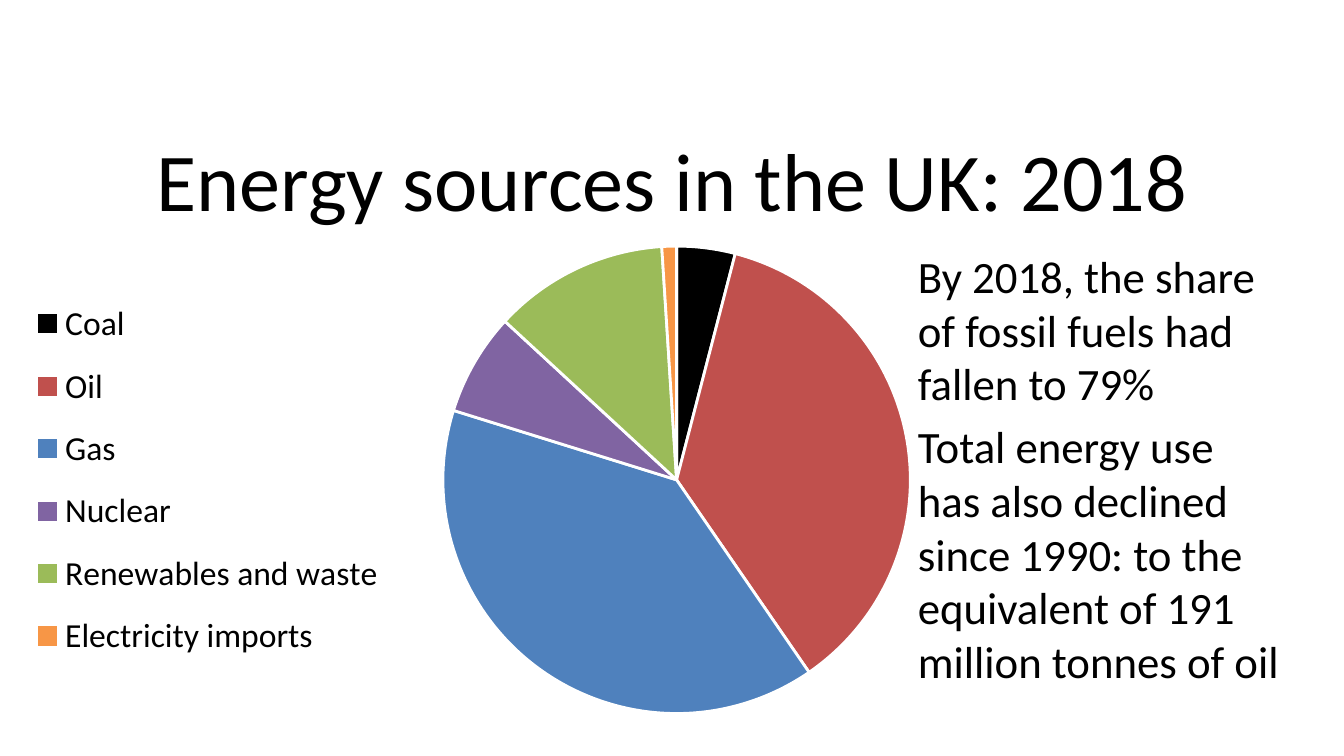
"""Build a slide with a pie chart of UK energy sources in 2018."""
from lxml import etree
from pptx import Presentation
from pptx import util as u
from pptx.chart import data as cd
from pptx.dml.color import RGBColor as Rgb
from pptx.enum import chart as ch, text as tx
from pptx.oxml import parse_xml
from pptx.oxml.ns import nsdecls

TITLE = "Energy sources in the UK: 2018"
NOTES = [
    "By 2018, the share of fossil fuels had fallen to 79%",
    "Total energy use has also declined since 1990: "
    "to the equivalent of 191 million tonnes of oil",
]
FUELS = [
    ("Coal", 4, "000000"),
    ("Oil", 36, "C0504D"),
    ("Gas", 39, "4F81BD"),
    ("Nuclear", 7, "8064A2"),
    ("Renewables and waste", 12, "9BBB59"),
    ("Electricity imports", 1, "F79646"),
]
THEME = {"font": "Calibri", "ink": "000000", "edge": "FFFFFF",
         "title": 44, "body": 24, "key": 18, "chart": 10}
SIZE = (720, 405)
BOX = {"title": (14.4, 62, 692, 67.7), "pie": (1.4, 121, 523.4, 272.2),
       "notes": (484.6, 129.6, 209.5, 243.4)}
PLOT = (0.45, 0.04, 0.48, 0.92)
KEY = (0.01, 0.11, 0.4, 0.78)


def style(font, kind):
    font.name = THEME["font"]
    font.size = u.Pt(THEME[kind])
    font.color.rgb = Rgb.from_string(THEME["ink"])


def place(shape, box):
    shape.left, shape.top, shape.width, shape.height = map(u.Pt, box)


def layout(parent, after, box, inner=False):
    for old in parent.findall("{*}layout"):
        parent.remove(old)
    root = parse_xml(f"<c:layout {nsdecls('c')}><c:manualLayout/></c:layout>")
    space = etree.QName(root).namespace
    pairs = [("layoutTarget", "inner")] if inner else []
    pairs += [("xMode", "edge"), ("yMode", "edge")]
    pairs += zip("xywh", box)
    for tag, val in pairs:
        etree.SubElement(root[0], f"{{{space}}}{tag}").set("val", str(val))
    if after is None:
        parent.insert(0, root)
    else:
        after.addnext(root)


def add_title(slide):
    head = slide.shapes.title
    place(head, BOX["title"])
    frame = head.text_frame
    frame.text = TITLE
    frame.vertical_anchor = tx.MSO_ANCHOR.MIDDLE
    para = frame.paragraphs[0]
    para.alignment = tx.PP_ALIGN.CENTER
    style(para.runs[0].font, "title")


def add_pie(slide):
    names, vals, hues = zip(*FUELS)
    data = cd.CategoryChartData()
    data.categories = names
    data.add_series("Series 1", vals)
    chart = slide.shapes.add_chart(
        ch.XL_CHART_TYPE.PIE, *map(u.Pt, BOX["pie"]), data).chart
    style(chart.font, "chart")
    chart.has_title = False
    chart.has_legend = True
    key = chart.legend
    key.position = ch.XL_LEGEND_POSITION.LEFT
    key.include_in_layout = False
    style(key.font, "key")
    plot = chart.plots[0]
    plot.vary_by_categories = True
    for i, hue in enumerate(hues):
        form = plot.series[0].points[i].format
        form.fill.solid()
        form.fill.fore_color.rgb = Rgb.from_string(hue)
        form.line.color.rgb = Rgb.from_string(THEME["edge"])
        form.line.width = u.Pt(1.5)
    area = chart.element.find(".//{*}plotArea")
    layout(area, None, PLOT, inner=True)
    side = chart.element.find(".//{*}legend")
    layout(side, side.find("{*}legendPos"), KEY)


def add_notes(slide):
    frame = slide.shapes.add_textbox(*map(u.Pt, BOX["notes"])).text_frame
    frame.word_wrap = True
    frame.text = "\n".join(NOTES)
    for i, para in enumerate(frame.paragraphs):
        if i:
            para.space_before = u.Pt(0.2 * THEME["body"])
        style(para.runs[0].font, "body")


def main():
    deck = Presentation()
    deck.slide_width, deck.slide_height = map(u.Pt, SIZE)
    slide = deck.slides.add_slide(deck.slide_layouts[5])
    add_title(slide)
    add_pie(slide)
    add_notes(slide)
    deck.save("out.pptx")


if __name__ == "__main__":
    main()
